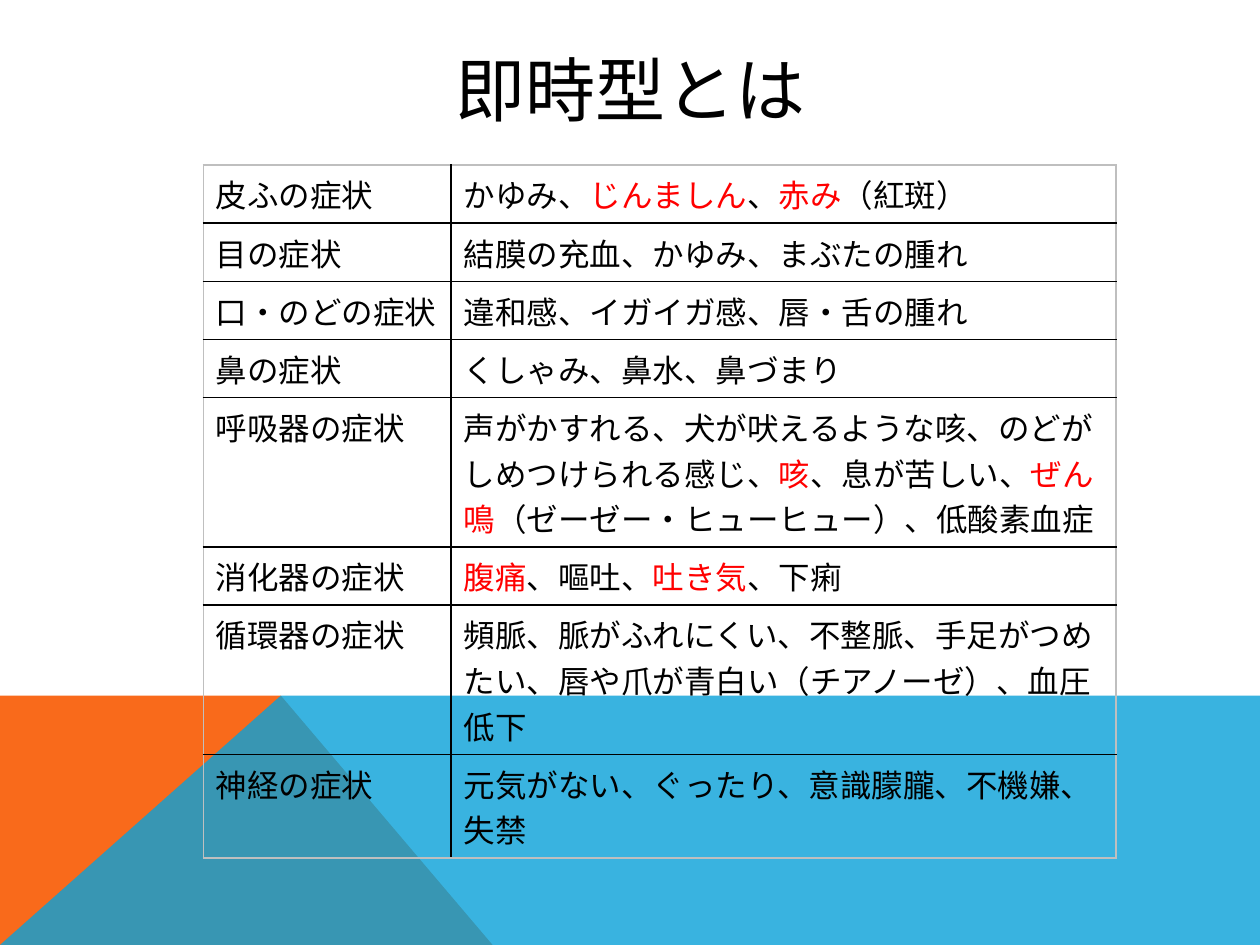
from pptx import Presentation
from pptx.dml.color import RGBColor
from pptx.enum import text
from pptx.oxml import ns
from pptx.util import Pt
from lxml import etree


def paint(hue):
    return RGBColor.from_string(hue)


def add_run(para, words, size, font, hue="000000"):
    run = para.add_run()
    run.text = words
    run.font.size = Pt(size)
    run.font.name = font
    run.font.color.rgb = paint(hue)
    east = etree.SubElement(run.font._element, ns.qn("a:ea"))
    east.set("typeface", "Noto Sans CJK JP")


deck = Presentation()
deck.slide_width, deck.slide_height = Pt(720), Pt(540)
slide = deck.slides.add_slide(deck.slide_layouts[6])

# Coloured bands at the foot; the blue one is see-through
top, peak = 397.5, 160.5
bands = [
    ("F96A1B", 100, [(0, 540), (0, top), (peak, top), (281.5, 540)]),
    ("08A1D9", 80, [(0, 540), (peak, top), (720, top), (720, 540)]),
]
for hue, alpha, spots in bands:
    spots = [(Pt(x), Pt(y)) for x, y in spots]
    build = slide.shapes.build_freeform(*spots[0])
    build.add_line_segments(spots[1:], close=True)
    band = build.convert_to_shape()
    band.shadow.inherit = False
    band.fill.solid()
    band.fill.fore_color.rgb = paint(hue)
    band.line.fill.background()
    if alpha < 100:
        tint = band._element.spPr.find(".//" + ns.qn("a:srgbClr"))
        etree.SubElement(tint, ns.qn("a:alpha")).set("val", str(alpha * 1000))

# Title
frame = slide.shapes.add_textbox(Pt(64.4), Pt(28.8), Pt(592), Pt(43.2)).text_frame
frame.word_wrap = True
frame.vertical_anchor = text.MSO_ANCHOR.MIDDLE
frame.paragraphs[0].alignment = text.PP_ALIGN.CENTER
add_run(frame.paragraphs[0], "即時型とは", 40, "Karla")

# Symptoms by organ and their line count; words between bars are red
rows = [
    ("皮ふの症状", "かゆみ、|じんましん|、|赤み|（紅斑）", 1),
    ("目の症状", "結膜の充血、かゆみ、まぶたの腫れ", 1),
    ("口・のどの症状", "違和感、イガイガ感、唇・舌の腫れ", 1),
    ("鼻の症状", "くしゃみ、鼻水、鼻づまり", 1),
    ("呼吸器の症状", "声がかすれる、犬が吠えるような咳、のどがしめつけられる感じ、"
     "|咳|、息が苦しい、|ぜん鳴|（ゼーゼー・ヒューヒュー）、低酸素血症", 3),
    ("消化器の症状", "|腹痛|、嘔吐、|吐き気|、下痢", 1),
    ("循環器の症状", "頻脈、脈がふれにくい、不整脈、手足がつめたい、"
     "唇や爪が青白い（チアノーゼ）、血圧低下", 3),
    ("神経の症状", "元気がない、ぐったり、意識朦朧、不機嫌、失禁", 2),
]
pad, step = 7.2, 26.05
highs = [pad + step * lines for organ, signs, lines in rows]
table = slide.shapes.add_table(
    len(rows), 2, Pt(116.2), Pt(94.3), Pt(521.5), Pt(sum(highs))).table
table.first_row = table.horz_banding = False
table.columns[0].width, table.columns[1].width = Pt(141.5), Pt(380)

for r, (organ, signs, lines) in enumerate(rows):
    table.rows[r].height = Pt(highs[r])
    for c, words in enumerate((organ, signs)):
        cell = table.cell(r, c)
        cell.fill.background()
        para = cell.text_frame.paragraphs[0]
        for n, part in enumerate(words.split("|")):
            if part:
                add_run(para, part, 18, "Noto Sans CJK JP",
                        "FF0000" if n % 2 else "000000")
        # Black rules inside, grey ones round the edge
        edges = {"L": c == 0, "R": c == 1, "T": r == 0, "B": r == len(rows) - 1}
        props = cell._tc.get_or_add_tcPr()
        for n, (side, outer) in enumerate(edges.items()):
            line = etree.Element(ns.qn("a:ln" + side), w=str(Pt(1)))
            fill = etree.SubElement(line, ns.qn("a:solidFill"))
            tint = etree.SubElement(fill, ns.qn("a:srgbClr"))
            tint.set("val", "BFBFBF" if outer else "000000")
            props.insert(n, line)

deck.save("out.pptx")
